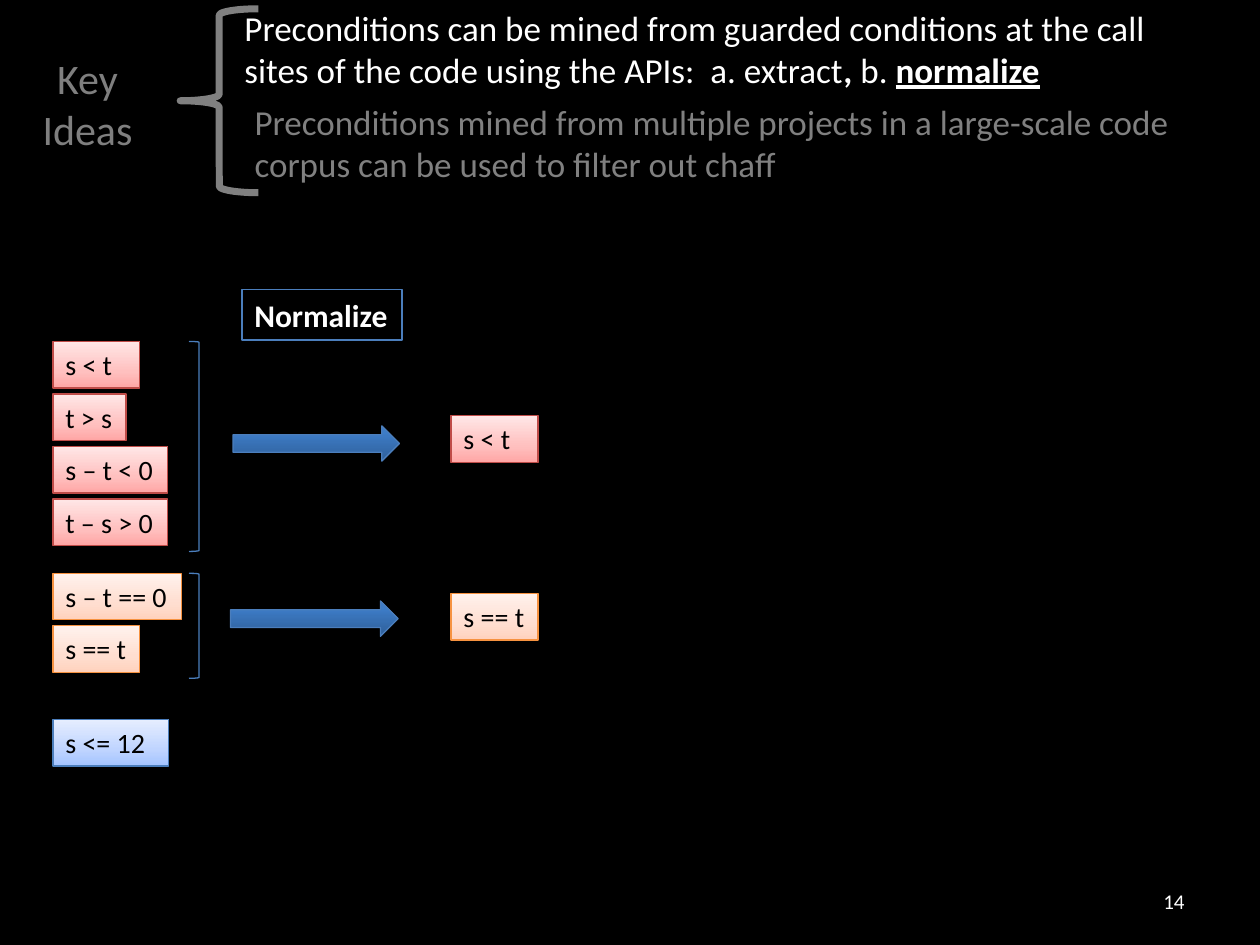
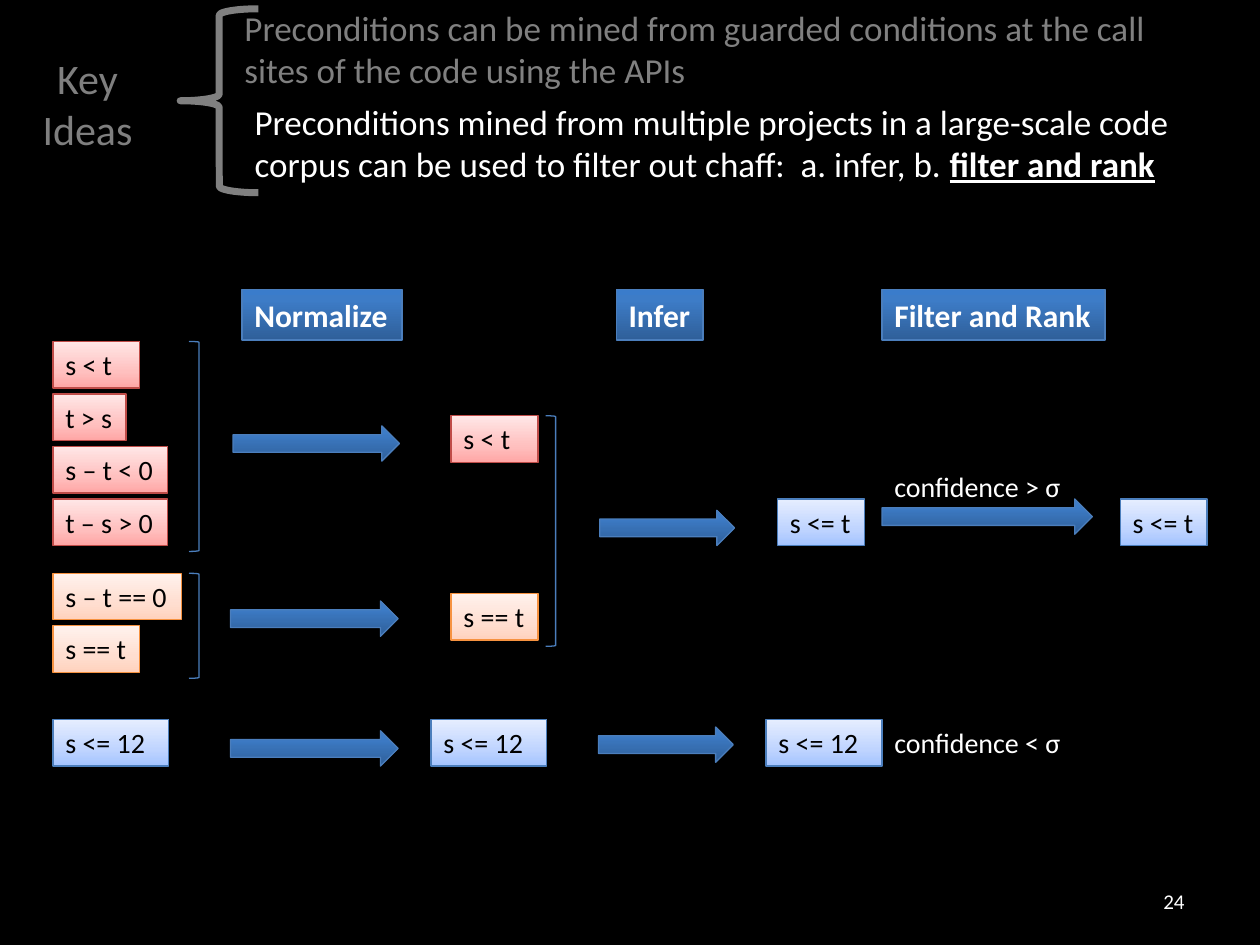
from dataclasses import dataclass
from lxml import etree
from pptx import Presentation
from pptx.dml.color import RGBColor
from pptx.enum.shapes import MSO_SHAPE as SHAPE
from pptx.enum.text import MSO_ANCHOR as ANCHOR, MSO_AUTO_SIZE as AUTO, PP_ALIGN as ALIGN
from pptx.oxml.ns import qn
from pptx.util import Inches, Pt


@dataclass(frozen=True)
class Theme:
    font = "Calibri"
    back, ink, white = "000000", "000000", "FFFFFF"
    gray, title_gray = "808080", "7F7F7F"
    title, idea, header, term, number = 24, 20, 18, 16, 12
    thin, thick = 0.75, 4
    line = "4B7EBC"
    fills = {
        "red": (((0, "FFA6A5"), (35, "FFC0BF"), (100, "FFE7E7")), "BF4C48"),
        "orange": (((0, "FFD2BD"), (35, "FFDED0"), (100, "FFF2ED")), "F69240"),
        "pale": (((0, "A4C4FF"), (35, "BFD4FF"), (100, "E6EEFF")), line),
        "blue": (((0, "2F5F99"), (80, "3D7CC7"), (100, "3A7CCB")), line),
    }


T = Theme()

MINED = "Preconditions can be mined from guarded conditions at the call sites of the code using the APIs"
CORPUS = "Preconditions mined from multiple projects in a large-scale code corpus can be used to filter out chaff"
STRONG = {"bold": True, "underline": True}

TERMS = {
    "s < t": ("red", 0.69, True),
    "t > s": ("red", 0.58, False),
    "s – t < 0": ("red", 0.91, False),
    "t – s > 0": ("red", 0.91, False),
    "s – t == 0": ("orange", 1.02, False),
    "s == t": ("orange", 0.69, False),
    "s <= 12": ("pale", 0.92, True),
    "s <= t": ("pale", 0.69, True),
}
GROUPS = [
    (2.71, ["s < t", "t > s", "s – t < 0", "t – s > 0"]),
    (4.55, ["s – t == 0", "s == t"]),
]
ROW_STEP = 5 / 12
TERM_LEFT, TERM_H, LAST_ROW = 0.42, 0.37, 5.71
HEADER_TOP, HEADER_H = 2.3, 0.4
ARROW_H, BRACKET_W = 0.28, 0.08

COMMON = {
    "terms": [("s < t", 3.58, 3.3), ("s == t", 3.58, 4.71), ("s <= 12", TERM_LEFT, LAST_ROW)],
    "arrows": [(1.85, 3.38, 1.32), (1.83, 4.77, 1.33)],
    "brackets": [(1.5, top, len(names) * ROW_STEP) for top, names in GROUPS],
}

SLIDES = [
    {
        "number": "14",
        "ideas": [
            (T.white, [(MINED + ":  a. extract", {}), (", ", {"bold": True}), ("b. ", {}), ("normalize", STRONG)]),
            (T.gray, [(CORPUS, {})]),
        ],
        "headers": [("Normalize", 1.92, 1.27, None)],
        "terms": [], "arrows": [], "brackets": [], "labels": [],
    },
    {
        "number": "24",
        "ideas": [
            (T.gray, [(MINED, {})]),
            (T.white, [(CORPUS + ":  a. infer, b. ", {}), ("filter and rank", STRONG)]),
        ],
        "headers": [
            ("Normalize", 1.92, 1.27, "blue"),
            ("Infer", 4.89, 0.69, "blue"),
            ("Filter and Rank", 7, 1.77, "blue"),
        ],
        "terms": [
            ("s <= 12", 3.42, LAST_ROW), ("s <= 12", 6.08, LAST_ROW),
            ("s <= t", 6.17, 3.96), ("s <= t", 8.89, 3.96),
        ],
        "arrows": [(7, 3.96, 1.67), (4.76, 4.05, 1.07), (1.83, 5.8, 1.33), (4.75, 5.77, 1.07)],
        "brackets": [(4.33, 3.3, 1.83)],
        "labels": [("confidence > σ", 3.68), ("confidence < σ", LAST_ROW)],
    },
]


def rgb(value):
    return RGBColor.from_string(value)


def place(sp, box):
    for name, value in zip(("left", "top", "width", "height"), box):
        setattr(sp, name, Inches(value))


def write(sp, runs, size, color, align=ALIGN.LEFT, anchor=ANCHOR.TOP, wrap=True, fit=True):
    tf = sp.text_frame
    form = {"word_wrap": wrap, "vertical_anchor": anchor,
            "auto_size": AUTO.SHAPE_TO_FIT_TEXT if fit else AUTO.NONE}
    for name, value in form.items():
        setattr(tf, name, value)
    p = tf.paragraphs[0]
    p.alignment = align
    for text, extra in runs:
        r = p.add_run()
        r.text = text
        for name, value in {"name": T.font, "size": Pt(size), **extra}.items():
            setattr(r.font, name, value)
        r.font.color.rgb = rgb(color)
    return p


def gradient(sp, stops):
    sp.fill.gradient()
    grad = sp._element.spPr.find(qn("a:gradFill"))
    for child in list(grad):
        grad.remove(child)
    stop_list = etree.SubElement(grad, qn("a:gsLst"))
    for pos, color in stops:
        gs = etree.SubElement(stop_list, qn("a:gs"), pos=str(pos * 1000))
        etree.SubElement(gs, qn("a:srgbClr"), val=color)
    etree.SubElement(grad, qn("a:lin"), ang="16200000", scaled="0")


def draw(slide, kind, box, fill=None, line=T.line, weight=T.thin):
    sp = slide.shapes.add_shape(kind, *map(Inches, box))
    sp.shadow.inherit = False
    if fill:
        stops, line = T.fills[fill]
        gradient(sp, stops)
    else:
        sp.fill.background()
    sp.line.color.rgb = rgb(line)
    sp.line.width = Pt(weight)
    return sp


def add_text(slide, box, text, size, **form):
    sp = slide.shapes.add_textbox(*map(Inches, box))
    write(sp, [(text, {})], size, T.white, **form)


def add_term(slide, text, left, top):
    fill, width, wrap = TERMS[text]
    sp = draw(slide, SHAPE.RECTANGLE, (left, top, width, TERM_H), fill)
    write(sp, [(text, {})], T.term, T.ink, wrap=wrap)


def add_key_ideas(slide, ideas):
    title, *bodies = slide.placeholders
    place(title, (0.03, 0.37, 1.33, 0.91))
    write(title, [("Key Ideas", {})], T.title, T.title_gray, ALIGN.CENTER)
    boxes = [(1.84, 0, 7.91, 0.77), (1.92, 0.75, 8.08, 0.77)]
    for sp, box, (color, runs) in zip(bodies, boxes, ideas):
        place(sp, box)
        p = write(sp, runs, T.idea, color)
        p.space_before = Pt(0)
        pPr = p._p.get_or_add_pPr()
        pPr.set("marL", "0")
        pPr.set("indent", "0")
        etree.SubElement(pPr, qn("a:buNone"))
    draw(slide, SHAPE.LEFT_BRACE, (1.43, 0.07, 0.62, 1.46), line=T.gray, weight=T.thick)


def build(prs, data):
    slide = prs.slides.add_slide(prs.slide_layouts[3])
    add_key_ideas(slide, data["ideas"])
    add_text(slide, (7.17, 6.95, 2.33, 0.4), data["number"], T.number,
             align=ALIGN.RIGHT, anchor=ANCHOR.MIDDLE, fit=False)
    for top, names in GROUPS:
        for i, text in enumerate(names):
            add_term(slide, text, TERM_LEFT, top + i * ROW_STEP)
    for left, top, height in COMMON["brackets"] + data["brackets"]:
        draw(slide, SHAPE.RIGHT_BRACKET, (left, top, BRACKET_W, height))
    for left, top, width in COMMON["arrows"] + data["arrows"]:
        draw(slide, SHAPE.RIGHT_ARROW, (left, top, width, ARROW_H), "blue")
    for term in COMMON["terms"] + data["terms"]:
        add_term(slide, *term)
    for text, left, width, fill in data["headers"]:
        sp = draw(slide, SHAPE.RECTANGLE, (left, HEADER_TOP, width, HEADER_H), fill)
        write(sp, [(text, {"bold": True})], T.header, T.white, wrap=False)
    for text, top in data["labels"]:
        add_text(slide, (7, top, 1.55, TERM_H), text, T.term, wrap=False)


def main():
    prs = Presentation()
    prs.slide_width, prs.slide_height = Inches(10), Inches(7.5)
    back = prs.slide_master.background.fill
    back.solid()
    back.fore_color.rgb = rgb(T.back)
    for data in SLIDES:
        build(prs, data)
    prs.save("out.pptx")


if __name__ == "__main__":
    main()
